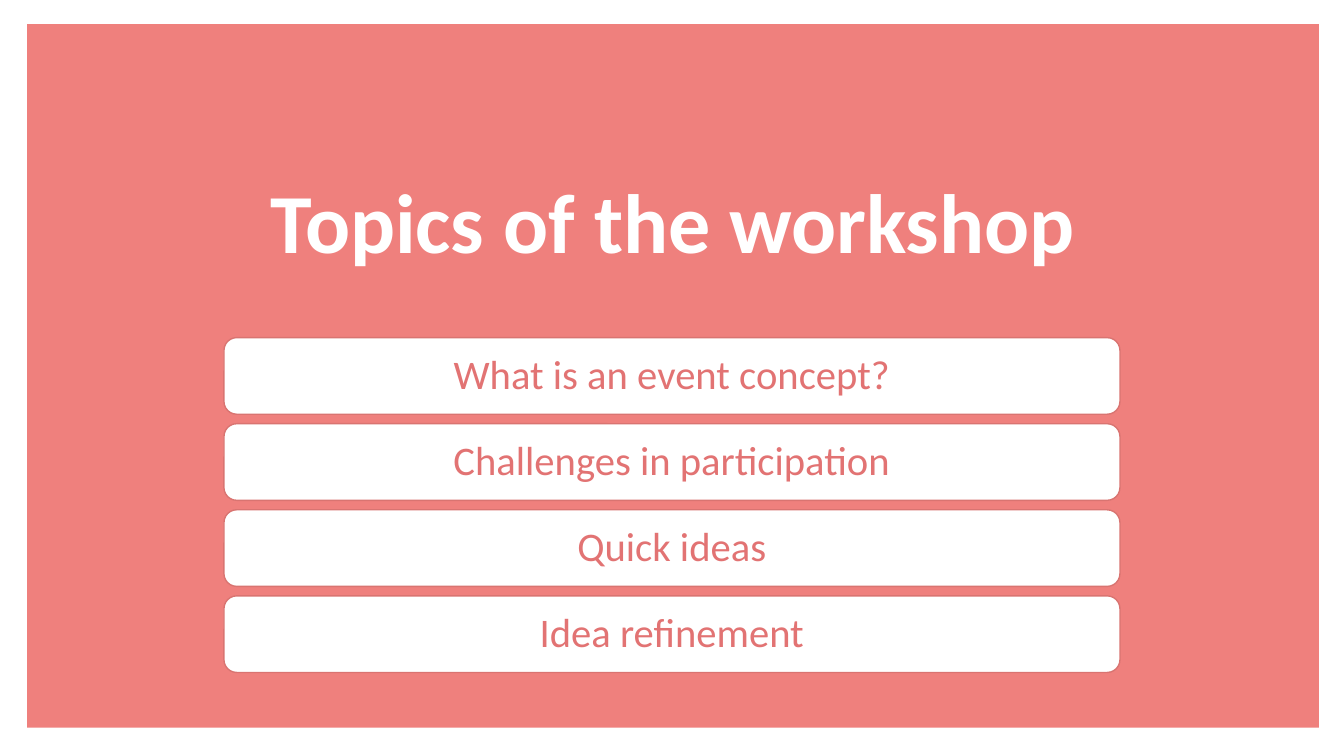
"""Build the slide that lists the topics of the workshop."""
from pptx import Presentation
from pptx.dml.color import RGBColor
from pptx.enum.shapes import MSO_SHAPE
from pptx.enum.text import MSO_ANCHOR, PP_ALIGN
from pptx.util import Inches, Pt

RECTANGLE = MSO_SHAPE.RECTANGLE
ROUNDED = MSO_SHAPE.ROUNDED_RECTANGLE
MIDDLE = MSO_ANCHOR.MIDDLE
CENTER = PP_ALIGN.CENTER

WHITE = RGBColor(0xFF, 0xFF, 0xFF)
CORAL = RGBColor(0xEF, 0x80, 0x7D)
BORDER = RGBColor(0xD9, 0x74, 0x71)
TOPIC_TEXT = RGBColor(0xE2, 0x73, 0x73)

FONT = "Calibri"
SLIDE_WIDTH, SLIDE_HEIGHT = 13.33, 7.5
PANEL_LEFT, PANEL_TOP, PANEL_WIDTH, PANEL_HEIGHT = 0.27, 0.24, 12.81, 6.98
TITLE_TOP, TITLE_HEIGHT = 1.17, 2.15
TOPIC_WIDTH, TOPIC_HEIGHT = SLIDE_WIDTH * 2 / 3, 0.76
TOPIC_LEFT = (SLIDE_WIDTH - TOPIC_WIDTH) / 2
TOPIC_TOP, TOPIC_PITCH = 3.35, 0.854
TOPICS = (
    "What is an event concept?",
    "Challenges in participation",
    "Quick ideas",
    "Idea refinement",
)


def add_box(slide, kind, box, fill, border=None):
    """Add a flat filled shape, with a thin border if a colour is given."""
    shape = slide.shapes.add_shape(kind, *map(Inches, box))
    shape.shadow.inherit = False
    shape.fill.solid()
    shape.fill.fore_color.rgb = fill
    if border is None:
        shape.line.fill.background()
    else:
        shape.line.color.rgb = border
        shape.line.width = Pt(1)
    return shape


def set_text(shape, text, size, color, bold=False):
    """Write one centred line of text in a shape."""
    text_frame = shape.text_frame
    text_frame.text = text
    text_frame.word_wrap = True
    text_frame.vertical_anchor = MIDDLE
    paragraph = text_frame.paragraphs[0]
    paragraph.alignment = CENTER
    paragraph.line_spacing = 0.9
    font = paragraph.runs[0].font
    font.name = FONT
    font.size = Pt(size)
    font.bold = bold
    font.color.rgb = color


def add_title(slide, text):
    """Add the large title across the panel."""
    box = (PANEL_LEFT, TITLE_TOP, PANEL_WIDTH, TITLE_HEIGHT)
    title = slide.shapes.add_textbox(*map(Inches, box))
    set_text(title, text, 60, WHITE, bold=True)


def add_topic(slide, row, text):
    """Add one topic bar in its row of the list."""
    top = TOPIC_TOP + row * TOPIC_PITCH
    box = (TOPIC_LEFT, top, TOPIC_WIDTH, TOPIC_HEIGHT)
    topic = add_box(slide, ROUNDED, box, WHITE, BORDER)
    set_text(topic, text, 29, TOPIC_TEXT)


def main():
    """Build and save the presentation."""
    presentation = Presentation()
    presentation.slide_width = Inches(SLIDE_WIDTH)
    presentation.slide_height = Inches(SLIDE_HEIGHT)
    slide = presentation.slides.add_slide(presentation.slide_layouts[6])
    panel = (PANEL_LEFT, PANEL_TOP, PANEL_WIDTH, PANEL_HEIGHT)
    add_box(slide, RECTANGLE, panel, CORAL)
    add_title(slide, "Topics of the workshop")
    for row, text in enumerate(TOPICS):
        add_topic(slide, row, text)
    presentation.save("out.pptx")


if __name__ == "__main__":
    main()
